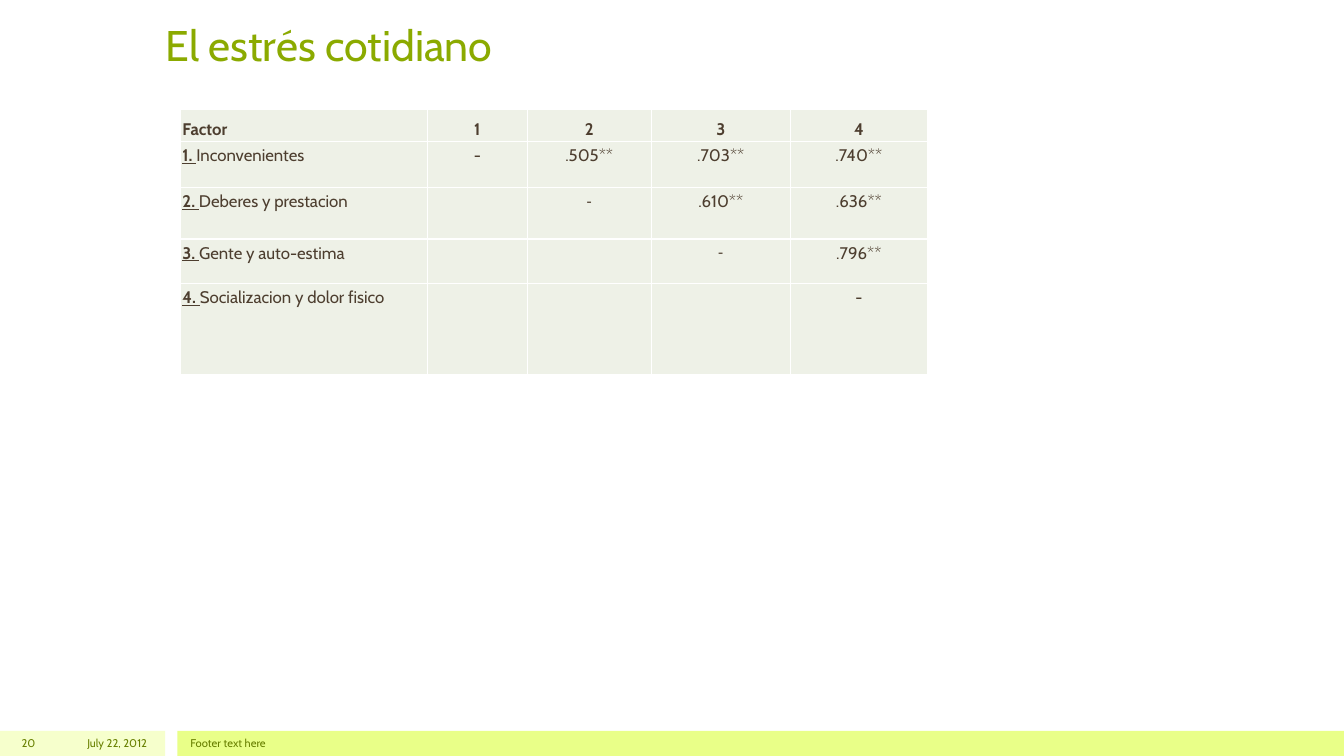
from dataclasses import dataclass

from lxml.etree import SubElement
from pptx import Presentation
from pptx.dml.color import RGBColor
from pptx.enum.shapes import MSO_SHAPE as Shape
from pptx.enum.text import MSO_ANCHOR as Anchor, MSO_AUTO_SIZE as Fit, PP_ALIGN as Align
from pptx.oxml.ns import qn
from pptx.util import Pt

GREEN = RGBColor(0x8B, 0xAA, 0x00)
OLIVE = RGBColor(0x68, 0x80, 0x00)
BROWN = RGBColor(0x4D, 0x3E, 0x2F)
SAGE = RGBColor(0xEE, 0xF1, 0xE7)
PALE = RGBColor(0xF6, 0xFF, 0xCC)
LIME = RGBColor(0xE9, 0xFF, 0x88)
WHITE = RGBColor(0xFF, 0xFF, 0xFF)
FONT = "Cabin"

FOOT_TOP, FOOT_TALL = 522, 18
WIDTHS = (176.4, 71.3, 88.6, 99.4, 97.9)
HEAD_TALL = 23


@dataclass
class Bar:
    left: float
    width: float
    fill: RGBColor


@dataclass
class Note:
    left: float
    width: float
    text: str
    align: Align


@dataclass
class Factor:
    name: str
    tall: float
    values: tuple[str, ...]
    dash: str = FONT  # font of the diagonal dash


BARS = (Bar(0, 118, PALE), Bar(126.7, 833.3, LIME))
NOTES = (
    Note(33.8, 78.5, "July 22, 2012", Align.RIGHT),
    Note(128.9, 720, "Footer text here", Align.LEFT),
    Note(0, 32.4, "20", Align.RIGHT),
)
FACTORS = (
    Factor("Inconvenientes", 33.1, (".505**", ".703**", ".740**")),
    Factor("Deberes y prestacion", 36.7, (".610**", ".636**"), "Calibri"),
    Factor("Gente y auto-estima", 31.7, (".796**",), "Calibri"),
    Factor("Socializacion y dolor fisico", 64.8, ()),
)


def add_run(para, text: str, size: float, color: RGBColor, face: str = FONT,
            bold: bool = False, under: bool = False) -> None:
    run = para.add_run()
    run.text = text
    font = run.font
    font.name, font.size, font.bold, font.underline = face, Pt(size), bold, under
    font.color.rgb = color


def add_bar(slide, bar: Bar) -> None:
    shape = slide.shapes.add_shape(
        Shape.RECTANGLE, Pt(bar.left), Pt(FOOT_TOP), Pt(bar.width), Pt(FOOT_TALL))
    shape.shadow.inherit = False
    shape.fill.solid()
    shape.fill.fore_color.rgb = bar.fill
    shape.line.fill.background()


def add_note(slide, note: Note) -> None:
    box = slide.shapes.add_textbox(
        Pt(note.left), Pt(FOOT_TOP), Pt(note.width), Pt(FOOT_TALL))
    frame = box.text_frame
    frame.word_wrap = True
    frame.vertical_anchor = Anchor.MIDDLE
    para = frame.paragraphs[0]
    para.alignment = note.align
    add_run(para, note.text, 8, OLIVE)


def style_cell(cell, col: int, anchor: Anchor):
    """Give the cell its edges, fill and margins; return its paragraph."""
    props = cell._tc.get_or_add_tcPr()
    for side in ("lnL", "lnR", "lnT", "lnB"):
        edge = SubElement(props, qn(f"a:{side}"), w=str(Pt(1)))
        fill = SubElement(edge, qn("a:solidFill"))
        SubElement(fill, qn("a:srgbClr"), val=str(WHITE))
    cell.fill.solid()
    cell.fill.fore_color.rgb = SAGE
    cell.margin_left = cell.margin_right = Pt(1.44)
    cell.margin_top = cell.margin_bottom = Pt(1.44)
    cell.vertical_anchor = anchor
    para = cell.text_frame.paragraphs[0]
    para.alignment = Align.CENTER if col else Align.LEFT
    para.line_spacing = Pt(16)
    return para


def add_grid(slide) -> None:
    talls = [HEAD_TALL] + [factor.tall for factor in FACTORS]
    grid = slide.shapes.add_table(
        len(talls), len(WIDTHS), Pt(128.9), Pt(78), Pt(sum(WIDTHS)), Pt(sum(talls))).table
    for col, width in zip(grid.columns, WIDTHS):
        col.width = Pt(width)
    for row, tall in zip(grid.rows, talls):
        row.height = Pt(tall)

    # Header row
    for col in range(len(WIDTHS)):
        para = style_cell(grid.cell(0, col), col, Anchor.BOTTOM)
        add_run(para, str(col) if col else "Factor", 12, BROWN, bold=True)

    # Upper triangle: a dash on the diagonal, values to its right
    for num, factor in enumerate(FACTORS, 1):
        for col in range(len(WIDTHS)):
            para = style_cell(grid.cell(num, col), col, Anchor.TOP)
            if col == 0:
                add_run(para, f"{num}. ", 12, BROWN, bold=True, under=True)
                add_run(para, factor.name, 12, BROWN)
            elif col == num:
                add_run(para, "-", 12, BROWN, factor.dash)
            elif col > num:
                add_run(para, factor.values[col - num - 1], 12, BROWN)


def add_title(slide) -> None:
    title = slide.shapes.title
    title.left, title.top = Pt(110.9), Pt(21.6)
    title.width, title.height = Pt(738), Pt(32.4)
    frame = title.text_frame
    frame.auto_size = Fit.NONE
    frame.vertical_anchor = Anchor.BOTTOM
    para = frame.paragraphs[0]
    para.alignment = Align.LEFT
    add_run(para, "El estrés cotidiano", 30.6, GREEN)


def main() -> None:
    deck = Presentation()
    deck.slide_width, deck.slide_height = Pt(960), Pt(540)
    slide = deck.slides.add_slide(deck.slide_layouts[5])
    for bar in BARS:
        add_bar(slide, bar)
    add_title(slide)
    add_grid(slide)
    for note in NOTES:
        add_note(slide, note)
    deck.save("out.pptx")


if __name__ == "__main__":
    main()
